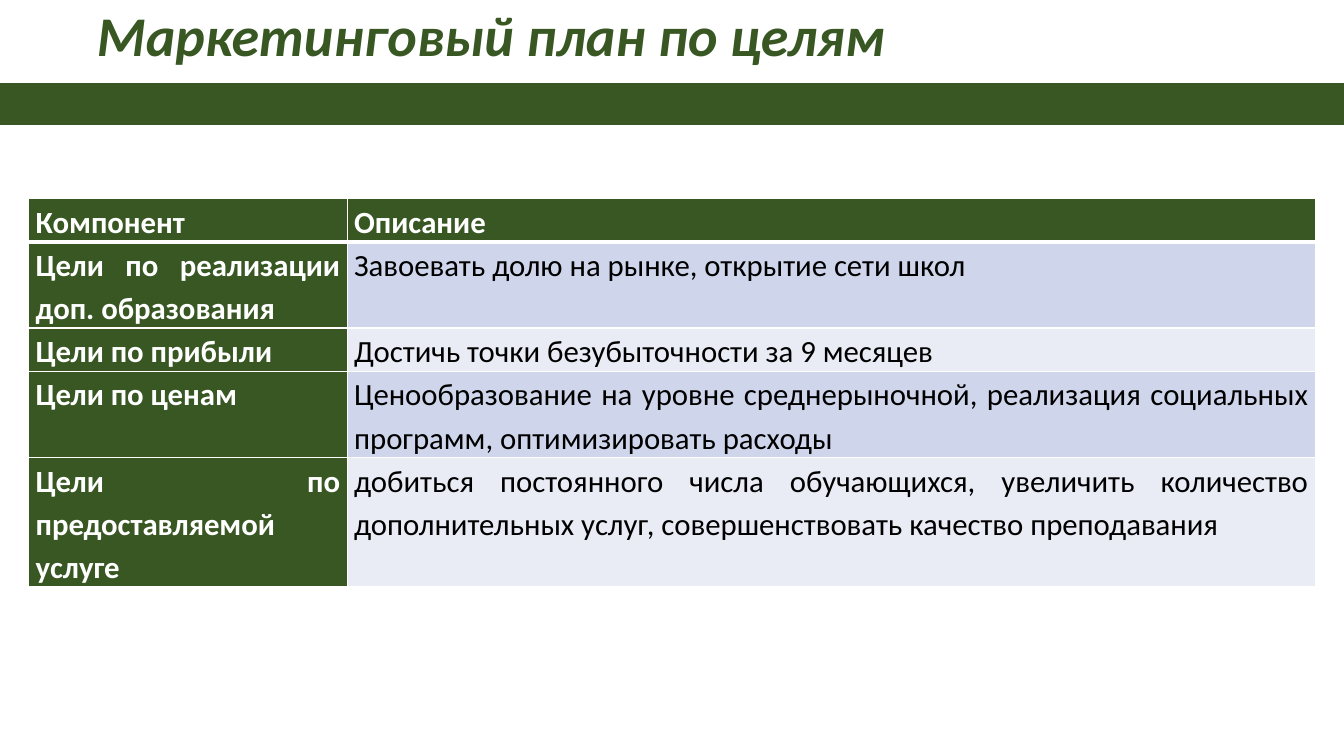
"""Build the slide with the marketing plan arranged by goals."""
from lxml import etree
from pptx import Presentation
from pptx.dml.color import RGBColor
from pptx.enum import shapes, text
from pptx.oxml import ns
from pptx.util import Pt

GREEN = RGBColor(0x38, 0x57, 0x23)
WHITE = RGBColor(0xFF, 0xFF, 0xFF)
BLACK = RGBColor(0x00, 0x00, 0x00)
BLUE_BAND = RGBColor(0xCF, 0xD5, 0xEA)
PALE_BAND = RGBColor(0xE9, 0xEB, 0xF5)
FONT = "Calibri"
SLIDE_WIDTH, SLIDE_HEIGHT = 960, 540
COLUMN_WIDTHS = (227.5, 691.5)
ROW_HEIGHTS = (26, 26, 26, 53, 53)
PLAN = (
    ("Компонент", "Описание"),
    ("Цели по реализации доп. образования",
     "Завоевать долю на рынке, открытие сети школ"),
    ("Цели по прибыли", "Достичь точки безубыточности за 9 месяцев"),
    ("Цели по ценам",
     "Ценообразование на уровне среднерыночной, реализация социальных "
     "программ, оптимизировать расходы"),
    ("Цели по предоставляемой услуге",
     "добиться постоянного числа обучающихся, увеличить количество "
     "дополнительных услуг, совершенствовать качество преподавания"),
)


def style_font(font, size, color, bold, italic=False):
    """Apply the slide font with the given size, colour and emphasis."""
    font.name = FONT
    font.size = Pt(size)
    font.color.rgb = color
    font.bold = bold
    font.italic = italic


def place_title(slide, wording):
    """Fill and position the title placeholder."""
    heading = slide.shapes.title
    heading.left, heading.top = Pt(62), Pt(-5)
    heading.width, heading.height = Pt(695.5), Pt(65)
    frame = heading.text_frame
    frame.text = wording
    frame.word_wrap = True
    frame.auto_size = text.MSO_AUTO_SIZE.NONE
    frame.vertical_anchor = text.MSO_ANCHOR.MIDDLE
    line = frame.paragraphs[0]
    line.alignment = text.PP_ALIGN.LEFT
    line.line_spacing = 0.9
    style_font(line.runs[0].font, 40, GREEN, True, True)


def add_band(slide):
    """Draw the full-width band under the title."""
    band = slide.shapes.add_shape(
        shapes.MSO_SHAPE.RECTANGLE, 0, Pt(59.75), Pt(SLIDE_WIDTH), Pt(29))
    band.shadow.inherit = False
    band.fill.solid()
    band.fill.fore_color.rgb = GREEN
    band.line.color.rgb = GREEN
    band.line.width = Pt(1)


def set_borders(cell, widths):
    """Give a cell white borders, with widths for left, right, top, bottom."""
    properties = cell._tc.get_or_add_tcPr()
    for index, (side, width) in enumerate(zip("LRTB", widths)):
        border = etree.Element(ns.qn(f"a:ln{side}"), w=str(Pt(width)))
        fill = etree.SubElement(border, ns.qn("a:solidFill"))
        etree.SubElement(fill, ns.qn("a:srgbClr"), val=str(WHITE))
        properties.insert(index, border)


def fill_cell(cell, wording, background, color, bold):
    """Write justified text into a cell and colour it."""
    cell.margin_left = cell.margin_right = Pt(5)
    cell.margin_top = cell.margin_bottom = 0
    cell.fill.solid()
    cell.fill.fore_color.rgb = background
    cell.text_frame.text = wording
    line = cell.text_frame.paragraphs[0]
    line.alignment = text.PP_ALIGN.JUSTIFY
    line.line_spacing = 1.15
    style_font(line.runs[0].font, 22, color, bold)


def add_plan(slide):
    """Add the table of goals with green headings and banded descriptions."""
    plan = slide.shapes.add_table(
        len(PLAN), len(COLUMN_WIDTHS), Pt(20.5), Pt(142),
        Pt(sum(COLUMN_WIDTHS)), Pt(sum(ROW_HEIGHTS))).table
    for column, width in zip(plan.columns, COLUMN_WIDTHS):
        column.width = Pt(width)
    for row, height in zip(plan.rows, ROW_HEIGHTS):
        row.height = Pt(height)
    for r, goal in enumerate(PLAN):
        for c, wording in enumerate(goal):
            cell = plan.cell(r, c)
            if r == 0 or c == 0:
                fill_cell(cell, wording, GREEN, WHITE, True)
            else:
                band = BLUE_BAND if r % 2 else PALE_BAND
                fill_cell(cell, wording, band, BLACK, False)
            top = 3 if r == 1 else 1
            bottom = 3 if r == 0 else 1
            set_borders(cell, (1, 1, top, bottom))


def main():
    """Assemble and save the slide."""
    deck = Presentation()
    deck.slide_width, deck.slide_height = Pt(SLIDE_WIDTH), Pt(SLIDE_HEIGHT)
    slide = deck.slides.add_slide(deck.slide_layouts[5])
    place_title(slide, "Маркетинговый план по целям")
    add_plan(slide)
    add_band(slide)
    deck.save("out.pptx")


if __name__ == "__main__":
    main()
